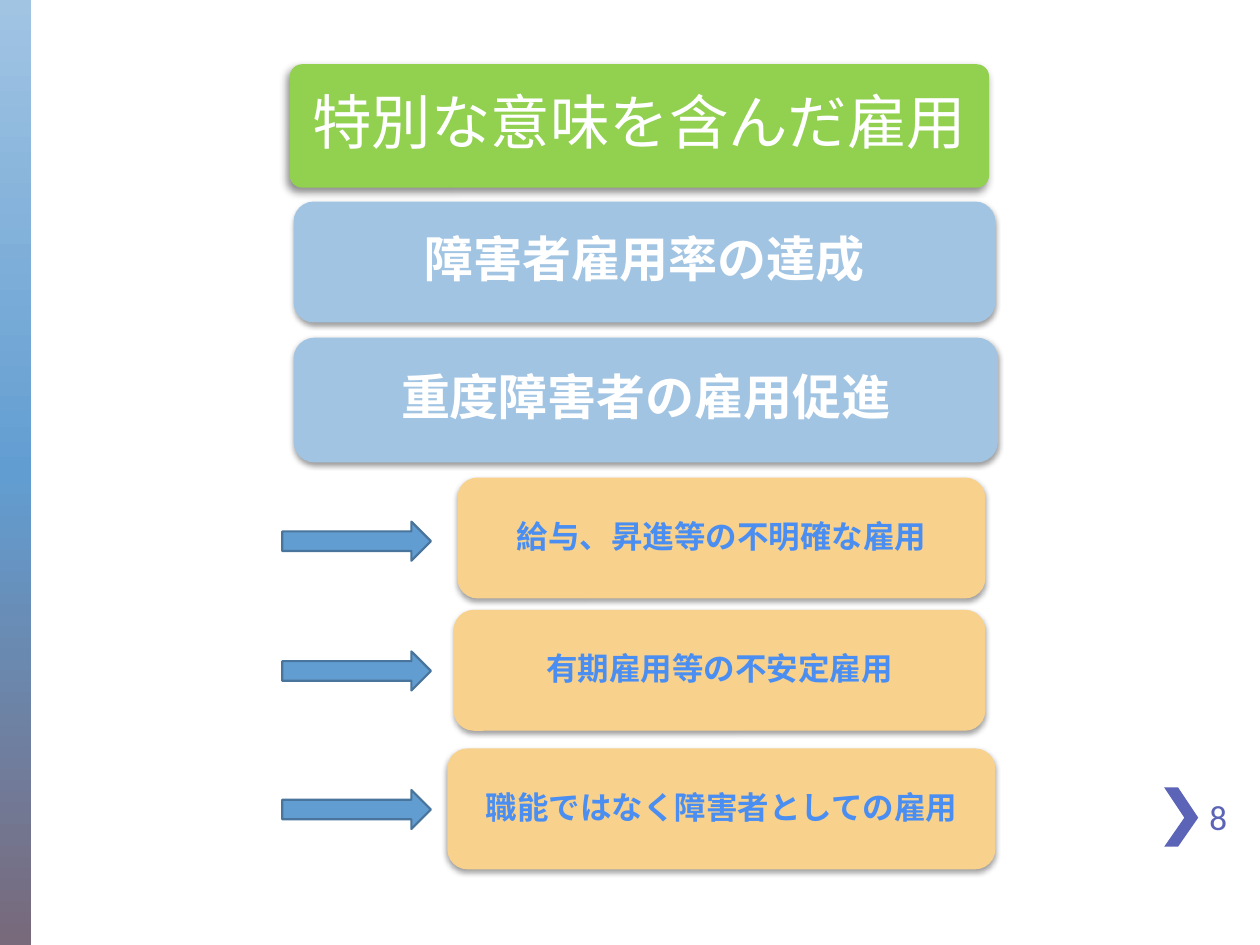
from lxml import etree
from pptx import Presentation
from pptx import util as u
from pptx.dml.color import RGBColor
from pptx.enum import shapes, text
from pptx.oxml import parse_xml
from pptx.oxml.ns import nsdecls, qn

JP = "Noto Sans CJK JP"
SOFT = (38, 3.1, 1.6, 90)  # shadow: opacity %, blur pt, distance pt, angle


def rgb(hex_color):
    return RGBColor.from_string(hex_color)


def place(sp, left, top, width, height):
    sp.left, sp.top = u.Inches(left), u.Inches(top)
    sp.width, sp.height = u.Inches(width), u.Inches(height)


def add_shadow(sp, opacity, blur, dist, angle):
    sp._element.spPr.append(parse_xml(
        f'<a:effectLst {nsdecls("a")}><a:outerShdw blurRad="{u.Pt(blur)}" '
        f'dist="{u.Pt(dist)}" dir="{angle * 60000}" algn="ctr" rotWithShape="0">'
        f'<a:srgbClr val="000000"><a:alpha val="{opacity * 1000}"/></a:srgbClr>'
        '</a:outerShdw></a:effectLst>'))


def write(sp, words, size, color, font=JP, bold=False, inset=0.1, centred=True):
    tf = sp.text_frame
    tf.word_wrap = True
    tf.auto_size = text.MSO_AUTO_SIZE.NONE
    tf.vertical_anchor = text.MSO_ANCHOR.MIDDLE
    tf.margin_left = tf.margin_right = u.Inches(inset)
    tf.margin_top = tf.margin_bottom = u.Inches(0.05)
    p = tf.paragraphs[0]
    if centred:
        p.alignment = text.PP_ALIGN.CENTER
        p.line_spacing = 0.9
        p.space_after = u.Pt(round(0.35 * size))
    r = p.add_run()
    r.text = words
    r.font.size, r.font.bold, r.font.name = u.Pt(size), bold, font
    r.font.color.rgb = rgb(color)
    # East Asian typeface
    ea = etree.Element(qn("a:ea"), typeface=font)
    r._r.rPr.find(qn("a:latin")).addnext(ea)


def add_box(s, at, fill, shadow=SOFT, corner=0.167):
    sp = s.shapes.add_shape(shapes.MSO_SHAPE.ROUNDED_RECTANGLE, *map(u.Inches, at))
    sp.adjustments[0] = corner
    sp.fill.solid()
    sp.fill.fore_color.rgb = rgb(fill)
    sp.line.fill.background()
    add_shadow(sp, *shadow)
    return sp


def add_arrow(s, top):
    sp = s.shapes.add_shape(shapes.MSO_SHAPE.RIGHT_ARROW, u.Inches(2.24),
                            u.Inches(top), u.Inches(1.18), u.Inches(0.31))
    sp.shadow.inherit = False
    sp.fill.solid()
    sp.fill.fore_color.rgb = rgb("629DD1")
    sp.line.color.rgb = rgb("49749B")
    sp.line.width = u.Pt(1.25)


def add_side_band(s):
    sp = s.shapes.add_shape(shapes.MSO_SHAPE.RECTANGLE, 0, 0, u.Inches(0.25), u.Inches(7.5))
    sp.shadow.inherit = False
    sp.line.fill.background()
    stops = "".join(f'<a:gs pos="{pos * 1000}"><a:srgbClr val="{color}"/></a:gs>'
                    for pos, color in ((0, "A1C4E3"), (50, "629DD1"), (100, "78697B")))
    sp._element.spPr.find(qn("a:prstGeom")).addnext(parse_xml(
        f'<a:gradFill {nsdecls("a")} rotWithShape="1"><a:gsLst>{stops}</a:gsLst>'
        '<a:lin ang="5400000" scaled="0"/></a:gradFill>'))


def add_page_mark(s):
    # Chevron
    fb = s.shapes.build_freeform(u.Inches(9.35), u.Inches(6.25), scale=1.0)
    points = [(9.24, 6.25), (9.4, 6.49), (9.24, 6.72), (9.35, 6.72), (9.51, 6.49)]
    fb.add_line_segments([(u.Inches(x), u.Inches(y)) for x, y in points], close=True)
    sp = fb.convert_to_shape()
    sp.shadow.inherit = False
    sp.fill.solid()
    sp.fill.fore_color.rgb = rgb("5C64B7")
    sp.line.fill.background()
    # Page number
    number = s.shapes.add_textbox(*map(u.Inches, (9.5, 6.28, 0.42, 0.4)))
    write(number, "8", 20, "5C64B7", font="Calibri", centred=False)


def add_title(s, words):
    add_box(s, (2.3, 0.51, 5.55, 0.98), "92D050", (45, 5, 3, 135), 0.1)
    title = s.shapes.title
    place(title, 2.33, 0.53, 5.49, 0.92)
    write(title, words, 34, "FFFFFF", inset=0.07)
    s.shapes._spTree.append(title._element)  # in front of its box


def main():
    prs = Presentation()
    prs.slide_width, prs.slide_height = u.Inches(10), u.Inches(7.5)
    s = prs.slides.add_slide(prs.slide_layouts[5])

    add_side_band(s)
    add_page_mark(s)
    add_title(s, "特別な意味を含んだ雇用")

    # Goals
    for words, at in (("障害者雇用率の達成", (2.33, 1.6, 5.57, 0.96)),
                      ("重度障害者の雇用促進", (2.33, 2.68, 5.59, 0.99))):
        write(add_box(s, at, "A1C4E3"), words, 28, "FFFFFF", bold=True)

    # Consequences, each with its arrow
    for words, left, top, width, arrow_top in (
            ("給与、昇進等の不明確な雇用", 3.63, 3.79, 4.19, 4.14),
            ("有期雇用等の不安定雇用", 3.6, 4.84, 4.22, 5.17),
            ("職能ではなく障害者としての雇用", 3.55, 5.94, 4.35, 6.27)):
        box = add_box(s, (left, top, width, 0.96), "F8D18C")
        write(box, words, 18, "4A8EF2", bold=True)
        add_arrow(s, arrow_top)

    prs.save("out.pptx")


if __name__ == "__main__":
    main()
